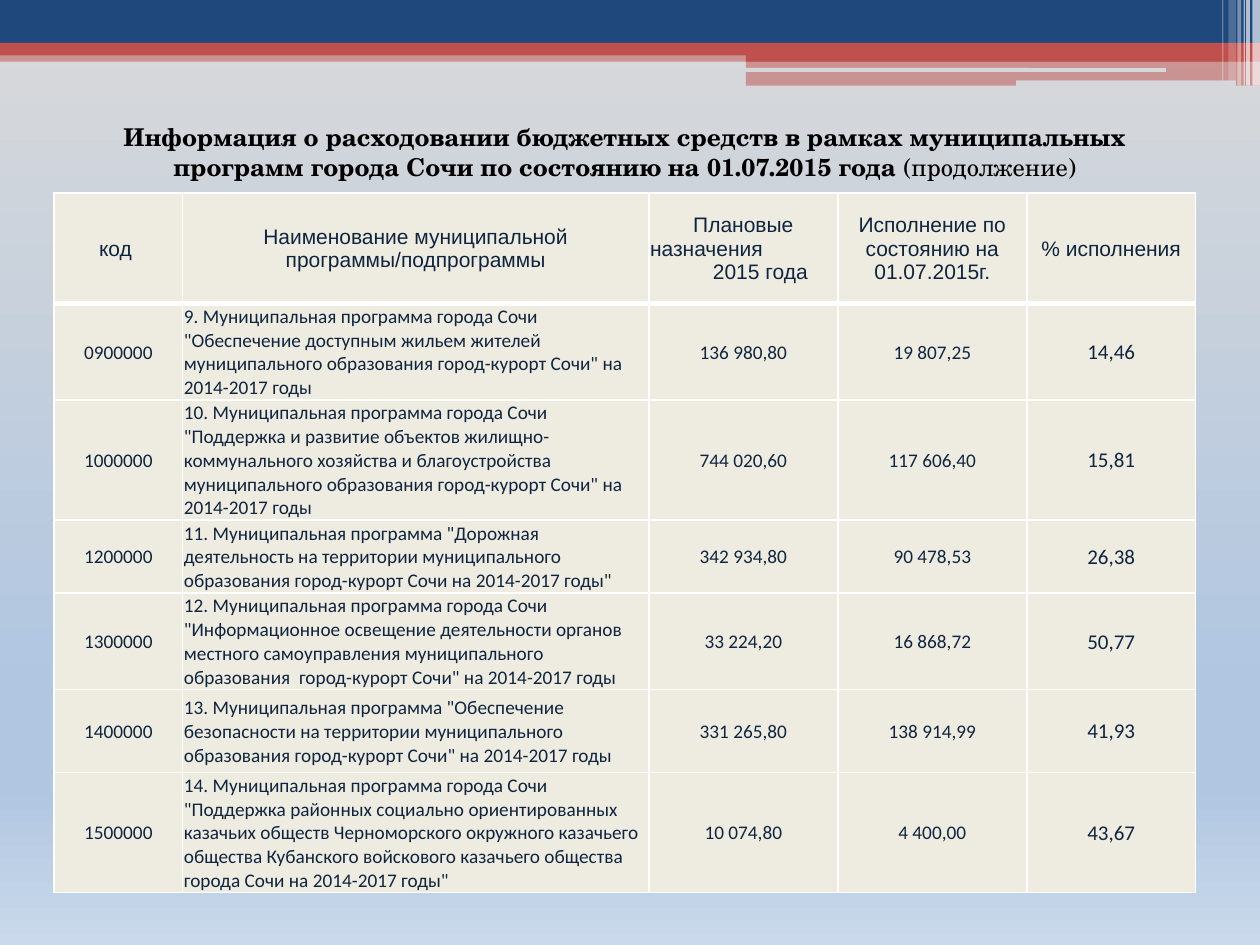
from lxml import etree
from pptx import Presentation
from pptx.dml.color import RGBColor
from pptx.enum.shapes import MSO_SHAPE
from pptx.enum.text import MSO_ANCHOR, PP_ALIGN
from pptx.oxml.ns import qn
from pptx.util import Inches, Pt

RECT, ROUND = MSO_SHAPE.RECTANGLE, MSO_SHAPE.ROUNDED_RECTANGLE
LEFT, CENTER = PP_ALIGN.LEFT, PP_ALIGN.CENTER
MIDDLE, BOTTOM = MSO_ANCHOR.MIDDLE, MSO_ANCHOR.BOTTOM

COLORS = {"navy": "1F497D", "red": "C0504D", "white": "FFFFFF", "black": "000000",
          "cell": "EEECE1", "ink": "0F243E", "sum": "10253F"}
BACK = [(0, "D9D9D9"), (74, "B0C6E1"), (83, "B0C6E1"), (100, "CAD9EB")]

COLS = [1.02, 3.7, 1.5, 1.5, 1.34]
ROWS = [0.88, 0.76, 0.95, 0.58, 0.76, 0.66, 0.95]
HEADS = ["код\u00a0".replace("\u00a0", " "), "Наименование муниципальной программы/подпрограммы", None,
         "Исполнение по состоянию на 01.07.2015г.", "% исполнения"]
# Lines of the plan heading: text, alignment, left indent
PLAN = [("Плановые", CENTER, 0), ("назначения", LEFT, 0), ("2015 года", CENTER, 0.27)]
DATA = [
    ("0900000", '9. Муниципальная программа города Сочи "Обеспечение доступным жильем жителей '
     'муниципального образования город-курорт Сочи" на 2014-2017 годы',
     "136 980,80", "19 807,25", "14,46"),
    ("1000000", '10. Муниципальная программа города Сочи "Поддержка и развитие объектов '
     'жилищно-коммунального хозяйства и благоустройства муниципального образования '
     'город-курорт Сочи" на 2014-2017 годы',
     "744 020,60", "117 606,40", "15,81"),
    ("1200000", '11. Муниципальная программа "Дорожная деятельность на территории '
     'муниципального образования город-курорт Сочи на 2014-2017 годы"',
     "342 934,80", "90 478,53", "26,38"),
    ("1300000", '12. Муниципальная программа города Сочи "Информационное освещение '
     'деятельности органов местного самоуправления муниципального образования  '
     'город-курорт Сочи" на 2014-2017 годы',
     "33 224,20", "16 868,72", "50,77"),
    ("1400000", '13. Муниципальная программа "Обеспечение безопасности на территории '
     'муниципального образования город-курорт Сочи" на 2014-2017 годы',
     "331 265,80", "138 914,99", "41,93"),
    ("1500000", '14. Муниципальная программа города Сочи "Поддержка районных социально '
     'ориентированных казачьих обществ Черноморского окружного казачьего общества '
     'Кубанского войскового казачьего общества города Сочи на 2014-2017 годы"',
     "10 074,80", "4 400,00", "43,67"),
]


def rgb(name):
    return RGBColor.from_string(COLORS[name])


def write(para, text, font="Calibri", size=11, color="ink", bold=False, align=CENTER, indent=0):
    para.alignment = align
    if indent:
        para._p.get_or_add_pPr().set("marL", str(Inches(indent)))
    run = para.add_run()
    run.text = text
    run.font.name, run.font.size, run.font.bold = font, Pt(size), bold
    run.font.color.rgb = rgb(color)


def paint_back(slide):
    fill = slide.background.fill
    fill.gradient()
    fill.gradient_angle = 270
    stops = next(slide._element.iter(qn("a:gsLst")))
    for old in list(stops):
        stops.remove(old)
    for pos, color in BACK:
        stop = etree.SubElement(stops, qn("a:gs"), pos=str(pos * 1000))
        etree.SubElement(stop, qn("a:srgbClr"), val=color)


def add_bar(slide, box, color=None, alpha=100, kind=RECT):
    """Add a borderless bar; without a colour it shows the slide background."""
    bar = slide.shapes.add_shape(kind, *map(Inches, box))
    bar.shadow.inherit = False
    bar.line.fill.background()
    if color is None:
        bar._element.set("useBgFill", "1")
        return
    bar.fill.solid()
    bar.fill.fore_color.rgb = rgb(color)
    if alpha < 100:
        tint = next(bar._element.spPr.iter(qn("a:srgbClr")))
        etree.SubElement(tint, qn("a:alpha"), val=str(alpha * 1000))


def add_band(slide, left, top, width):
    # Full-width stripes
    for y, high, color, alpha in [(0.4, 0.09, "red", 50), (0, 0.34, "navy", 100),
                                  (0.34, 0.1, "red", 100)]:
        add_bar(slide, (left, top + y, width, high), color, alpha)
    # Step on the right with two slots cut out
    step = 5.92
    for y, high, alpha in [(0.39, 0.1, 100), (0.48, 0.2, 50)]:
        add_bar(slide, (left + step, top + y, width - step, high), "red", alpha)
    for x, y, wide, high in [(5.91, 0.54, 3.35, 0.03), (8.06, 0.64, 1.75, 0.04)]:
        add_bar(slide, (left + x, top + y, wide, high), kind=ROUND)
    # Thin light strips at the right edge
    for x, wide, high, alpha in [(9.94, 0.06, 0.68, 65), (9.89, 0.03, 0.68, 65),
                                 (9.87, 0.01, 0.68, 60), (9.82, 0.03, 0.68, 40),
                                 (9.75, 0.06, 0.64, 20), (9.7, 0.01, 0.64, 30)]:
        add_bar(slide, (left + x, top, wide, high), "white", alpha)


def add_title(slide, *box):
    frame = slide.shapes.add_textbox(*map(Inches, box)).text_frame
    frame.word_wrap = True
    para = frame.paragraphs[0]
    style = {"font": "TeX Gyre Schola", "size": 14, "color": "black"}
    write(para, "Информация о расходовании бюджетных средств в рамках муниципальных "
          "программ города Сочи по состоянию на 01.07.2015 года ", bold=True, **style)
    write(para, "(продолжение)", **style)


def style_cell(cell, anchor, base):
    cell.vertical_anchor = anchor
    cell.margin_left = cell.margin_right = cell.margin_top = Inches(0.01)
    cell.margin_bottom = 0
    props = cell._tc.get_or_add_tcPr()
    for side, wide in [("L", 1), ("R", 1), ("T", 1), ("B", base)]:
        line = etree.SubElement(props, qn("a:ln" + side), w=str(Pt(wide)))
        paint = etree.SubElement(line, qn("a:solidFill"))
        etree.SubElement(paint, qn("a:srgbClr"), val=COLORS["white"])
    cell.fill.solid()
    cell.fill.fore_color.rgb = rgb("cell")


def add_grid(slide, left, top):
    box = map(Inches, (left, top, sum(COLS), sum(ROWS)))
    table = slide.shapes.add_table(len(ROWS), len(COLS), *box).table
    for col, wide in zip(table.columns, COLS):
        col.width = Inches(wide)
    for row, high in zip(table.rows, ROWS):
        row.height = Inches(high)
    # Heading row
    for cell, text in zip(table.rows[0].cells, HEADS):
        style_cell(cell, MIDDLE, 3)
        frame = cell.text_frame
        lines = PLAN if text is None else [(text, CENTER, 0)]
        for i, (part, align, indent) in enumerate(lines):
            para = frame.add_paragraph() if i else frame.paragraphs[0]
            write(para, part, font="Arial", size=12, align=align, indent=indent)
    # One row for each programme
    for r, record in enumerate(DATA, 1):
        for c, text in enumerate(record):
            cell = table.cell(r, c)
            style_cell(cell, BOTTOM if c == 1 and r < 3 else MIDDLE, 1)
            write(cell.text_frame.paragraphs[0], text, size=12 if c == 4 else 11,
                  color="sum" if c > 1 else "ink", align=LEFT if c == 1 else CENTER)


def main():
    deck = Presentation()
    deck.slide_width, deck.slide_height = Inches(10), Inches(7.5)
    slide = deck.slides.add_slide(deck.slide_layouts[6])
    paint_back(slide)
    add_band(slide, 0, 0, 10)
    add_grid(slide, 0.43, 1.53)
    add_title(slide, 0.51, 0.92, 8.9, 0.57)
    deck.save("out.pptx")


if __name__ == "__main__":
    main()
